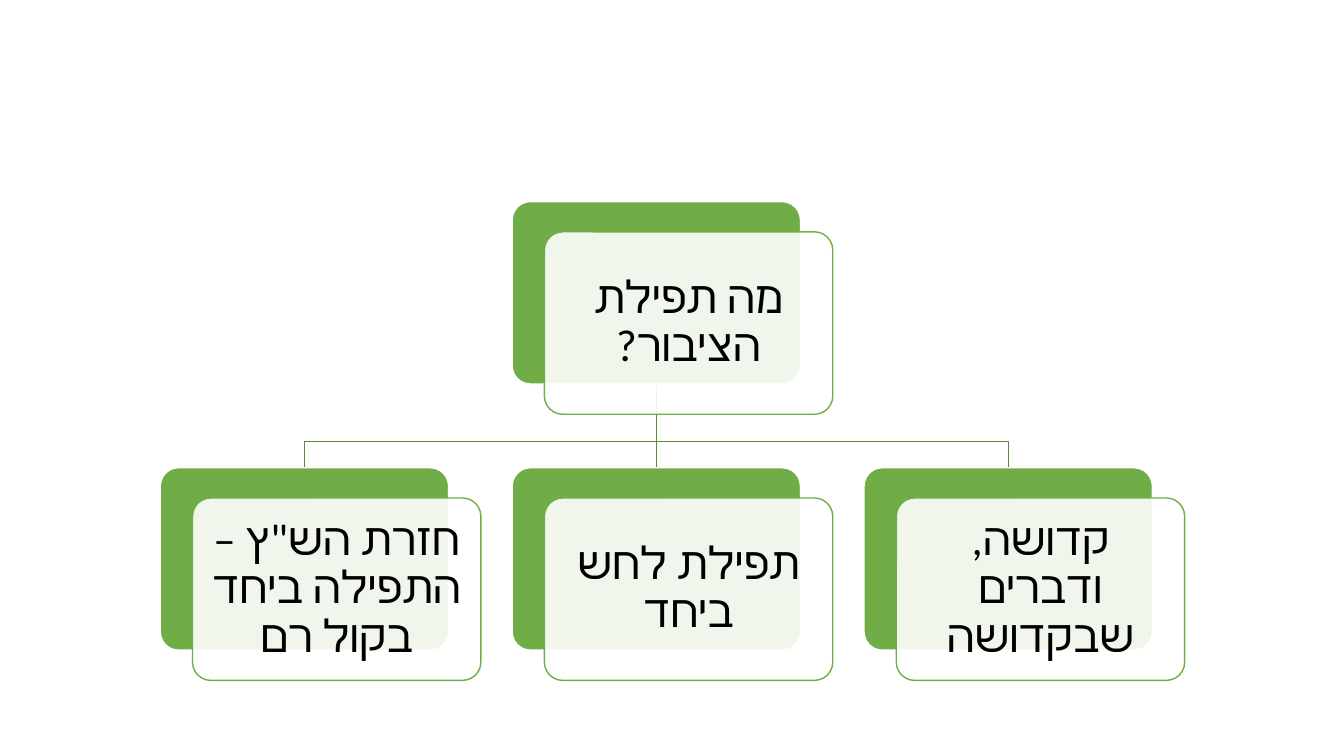
from dataclasses import dataclass

from lxml import etree
from pptx import Presentation
from pptx.dml.color import RGBColor
from pptx.enum import shapes, text
from pptx.oxml import ns
from pptx.util import Inches, Pt


@dataclass(frozen=True)
class Theme:
    green: RGBColor = RGBColor(0x70, 0xAD, 0x47)
    dark_green: RGBColor = RGBColor(0x5A, 0x8B, 0x39)
    white: RGBColor = RGBColor(0xFF, 0xFF, 0xFF)
    black: RGBColor = RGBColor(0, 0, 0)
    font: str = "Calibri"
    size: Pt = Pt(32)
    line: Pt = Pt(1)


THEME = Theme()
CARD_WIDTH, CARD_HEIGHT = 2.86, 1.81
CARD_SHIFT = (0.32, 0.3)
COLUMNS = [1.59 + 3.49 * column for column in range(3)]
ROOT_TOP, BRANCH_TOP, BAR_TOP = 2, 4.64, 4.38
ROOT = "מה תפילת הציבור?"
BRANCHES = [
    'חזרת הש"ץ – התפילה ביחד בקול רם',
    "תפילת לחש ביחד",
    "קדושה, ודברים שבקדושה",
]


def add_card(page, left, top, fill, line):
    card = page.shapes.add_shape(
        shapes.MSO_SHAPE.ROUNDED_RECTANGLE,
        Inches(left), Inches(top), Inches(CARD_WIDTH), Inches(CARD_HEIGHT))
    card.adjustments[0] = 0.1
    card.shadow.inherit = False
    card.fill.solid()
    card.fill.fore_color.rgb = fill
    card.line.color.rgb = line
    card.line.width = THEME.line
    return card


def set_opacity(shape, percent):
    color = shape.fill._xPr.find(ns.qn("a:solidFill"))[0]
    etree.SubElement(color, ns.qn("a:alpha"), val=str(percent * 1000))


def write_hebrew(shape, words):
    """Centre right-to-left text, with the font set for complex scripts too."""
    frame = shape.text_frame
    frame.word_wrap = True
    frame.vertical_anchor = text.MSO_ANCHOR.MIDDLE
    frame.margin_left = frame.margin_right = Inches(0.13)
    frame.margin_top = frame.margin_bottom = Inches(0.13)
    para = frame.paragraphs[0]
    para.text = words
    para.alignment = text.PP_ALIGN.CENTER
    para.line_spacing = 0.9
    para.font.size = THEME.size
    para.font.name = THEME.font
    para.font.color.rgb = THEME.black
    properties = para._p.get_or_add_pPr()
    properties.set("rtl", "1")
    etree.SubElement(properties.find(ns.qn("a:defRPr")), ns.qn("a:cs"),
                     typeface=THEME.font)


def add_node(page, left, top, words):
    """Add a green card with a translucent text card shifted over it."""
    add_card(page, left, top, THEME.green, THEME.white)
    right, down = CARD_SHIFT
    front = add_card(page, left + right, top + down, THEME.white, THEME.green)
    set_opacity(front, 90)
    write_hebrew(front, words)


def add_straight_link(page, x, top, bottom):
    link = page.shapes.add_connector(
        shapes.MSO_CONNECTOR.STRAIGHT,
        Inches(x), Inches(top), Inches(x), Inches(bottom))
    etree.SubElement(link._element.spPr, ns.qn("a:effectLst"))
    return link


def add_bent_link(page, start, end, top, bottom):
    outline = page.shapes.build_freeform(Inches(start), Inches(top))
    corners = [(start, BAR_TOP), (end, BAR_TOP), (end, bottom)]
    outline.add_line_segments(
        [(Inches(x), Inches(y)) for x, y in corners], close=False)
    link = outline.convert_to_shape()
    link.fill.background()
    link.shadow.inherit = False
    return link


def add_links(page):
    top = ROOT_TOP + CARD_HEIGHT
    left, middle, right = [column + CARD_WIDTH / 2 for column in COLUMNS]
    links = [add_bent_link(page, middle, end, top, BRANCH_TOP)
             for end in (left, right)]
    links.append(add_straight_link(page, middle, top, BRANCH_TOP))
    for link in links:
        link.line.color.rgb = THEME.dark_green
        link.line.width = THEME.line


def main():
    deck = Presentation()
    deck.slide_width, deck.slide_height = Inches(13.33), Inches(7.5)
    page = deck.slides.add_slide(deck.slide_layouts[6])
    add_links(page)
    add_node(page, COLUMNS[1], ROOT_TOP, ROOT)
    for left, words in zip(COLUMNS, BRANCHES):
        add_node(page, left, BRANCH_TOP, words)
    deck.save("out.pptx")


if __name__ == "__main__":
    main()
